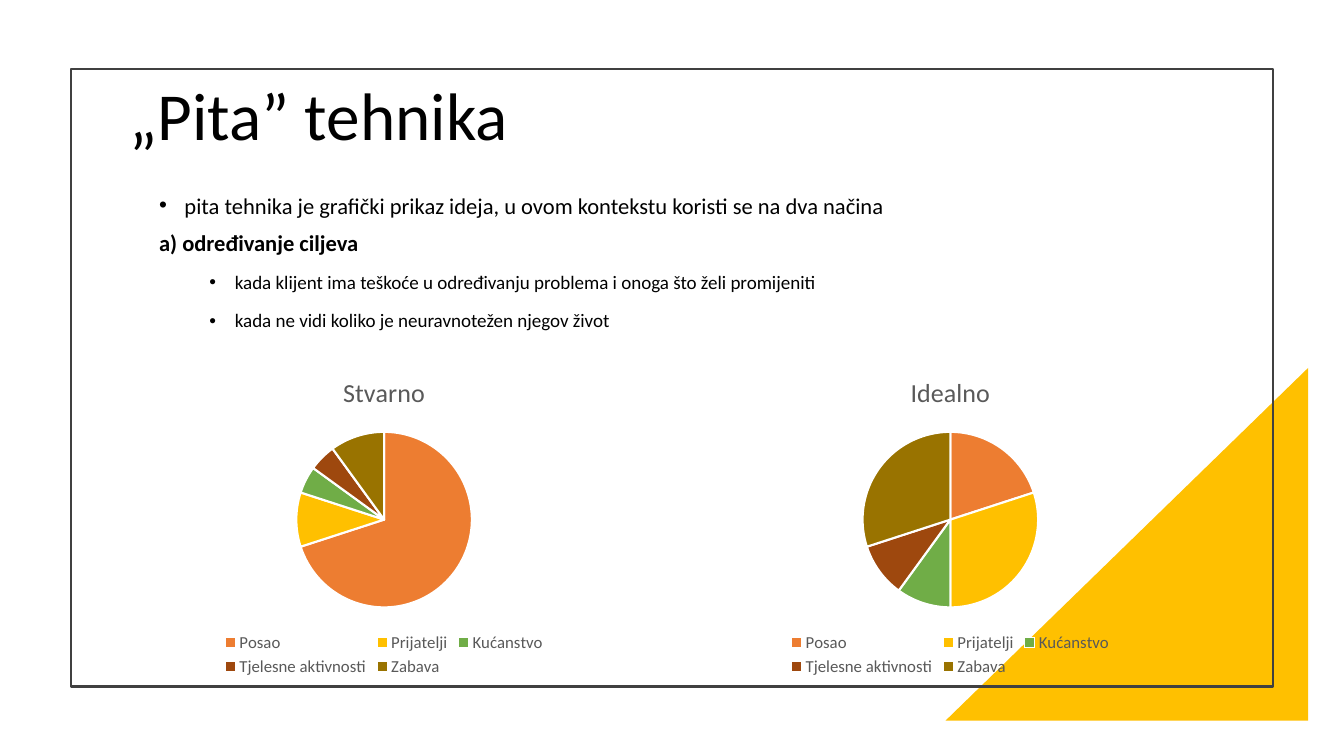
from lxml import etree
from pptx import Presentation
from pptx.chart.data import CategoryChartData
from pptx.dml.color import RGBColor
from pptx.enum.chart import XL_CHART_TYPE, XL_LEGEND_POSITION
from pptx.enum.shapes import MSO_SHAPE
from pptx.oxml.ns import qn
from pptx.util import Cm, Pt

PIE = XL_CHART_TYPE.PIE
BOTTOM = XL_LEGEND_POSITION.BOTTOM
RECT = MSO_SHAPE.RECTANGLE
WEDGE = MSO_SHAPE.RIGHT_TRIANGLE

FONT = "Calibri"
BLACK, GREY, DARK, WHITE, GOLD = "000000", "595959", "404040", "FFFFFF", "FFC000"

TITLE = "„Pita” tehnika"
# text, size, bold, bullet, left margin, line spacing, space before, space after
BODY = [
    ("pita tehnika je grafički prikaz ideja, u ovom kontekstu koristi se na dva načina",
     16.1, False, True, 0.64, 0.7, 10, 0),
    ("a) određivanje ciljeva", 16.1, True, False, 0, 0.87, 10, 8),
    ("kada klijent ima teškoće u određivanju problema i onoga što želi promijeniti",
     13.6, False, True, 1.91, 0.87, 5, 8),
    ("kada ne vidi koliko je neuravnotežen njegov život",
     13.6, False, True, 1.91, 0.87, 5, 8),
]
SLICES = {"Posao": "ED7D31", "Prijatelji": GOLD, "Kućanstvo": "70AD47",
          "Tjelesne aktivnosti": "9E480E", "Zabava": "997300"}
PIES = {"Stvarno": (70, 10, 5, 5, 10), "Idealno": (20, 30, 10, 10, 30)}
PIE_LEFT, PIE_STEP, PIE_TOP, PIE_W, PIE_H = 3.28, 14.27, 9.02, 12.8, 8.13
INDENT = 0.64


def rgb(code):
    return RGBColor.from_string(code)


def box(*sides):
    return [Cm(side) for side in sides]


def style(font, size, color, bold=False):
    font.name, font.size, font.bold = FONT, Pt(size), bold
    font.color.rgb = rgb(color)


def indent(para, left, bullet):
    """Set the left margin, with a hanging bullet if asked."""
    props = para._p.get_or_add_pPr()
    props.set("marL", str(Cm(left)))
    props.set("indent", str(-Cm(INDENT) if bullet else 0))
    if bullet:
        etree.SubElement(props, qn("a:buFont")).set("typeface", "Arial")
        etree.SubElement(props, qn("a:buChar")).set("char", "•")
    else:
        etree.SubElement(props, qn("a:buNone"))


def add_pie(shapes, name, values, left):
    data = CategoryChartData()
    data.categories = list(SLICES)
    data.add_series(name, values)
    chart = shapes.add_chart(PIE, *box(left, PIE_TOP, PIE_W, PIE_H), data).chart
    style(chart.font, 10, BLACK)
    chart.has_title = True
    title = chart.chart_title
    title.include_in_layout = False
    title.text_frame.text = name
    style(title.text_frame.paragraphs[0].runs[0].font, 18.6, GREY)
    chart.has_legend = True
    chart.legend.position = BOTTOM
    chart.legend.include_in_layout = False
    style(chart.legend.font, 12, GREY)
    plot = chart.plots[0]
    plot.vary_by_categories = True
    for i, color in enumerate(SLICES.values()):
        look = plot.series[0].points[i].format
        look.fill.solid()
        look.fill.fore_color.rgb = rgb(color)
        look.line.color.rgb = rgb(WHITE)
        look.line.width = Pt(1.5)


deck = Presentation()
deck.slide_width, deck.slide_height = box(33.87, 19.05)
shapes = deck.slides.add_slide(deck.slide_layouts[6]).shapes

corner = shapes.add_shape(WEDGE, *box(23.83, 9.27, 9.14, 8.89))
corner.shadow.inherit = False
corner.fill.solid()
corner.fill.fore_color.rgb = rgb(GOLD)
corner.line.fill.background()
corner._element.spPr.xfrm.set("flipH", "1")

frame = shapes.add_shape(RECT, *box(1.78, 1.73, 30.3, 15.57))
frame.shadow.inherit = False
frame.fill.background()
frame.line.color.rgb = rgb(DARK)
frame.line.width = Pt(1.5)

body = shapes.add_textbox(*box(3.76, 4.9, 26.34, 4.11)).text_frame
body.word_wrap = True
body.text = "\n".join(row[0] for row in BODY)
for para, row in zip(body.paragraphs, BODY):
    text, size, bold, bullet, left, lines, before, after = row
    para.line_spacing = lines
    para.space_before, para.space_after = Pt(before), Pt(after)
    indent(para, left, bullet)
    style(para.runs[0].font, size, BLACK, bold)

head = shapes.add_textbox(*box(3.02, 1.73, 21.31, 2.31)).text_frame
head.word_wrap = True
head.text = TITLE
style(head.paragraphs[0].runs[0].font, 48, BLACK)

for i, (name, values) in enumerate(PIES.items()):
    add_pie(shapes, name, values, PIE_LEFT + i * PIE_STEP)

deck.save("out.pptx")
